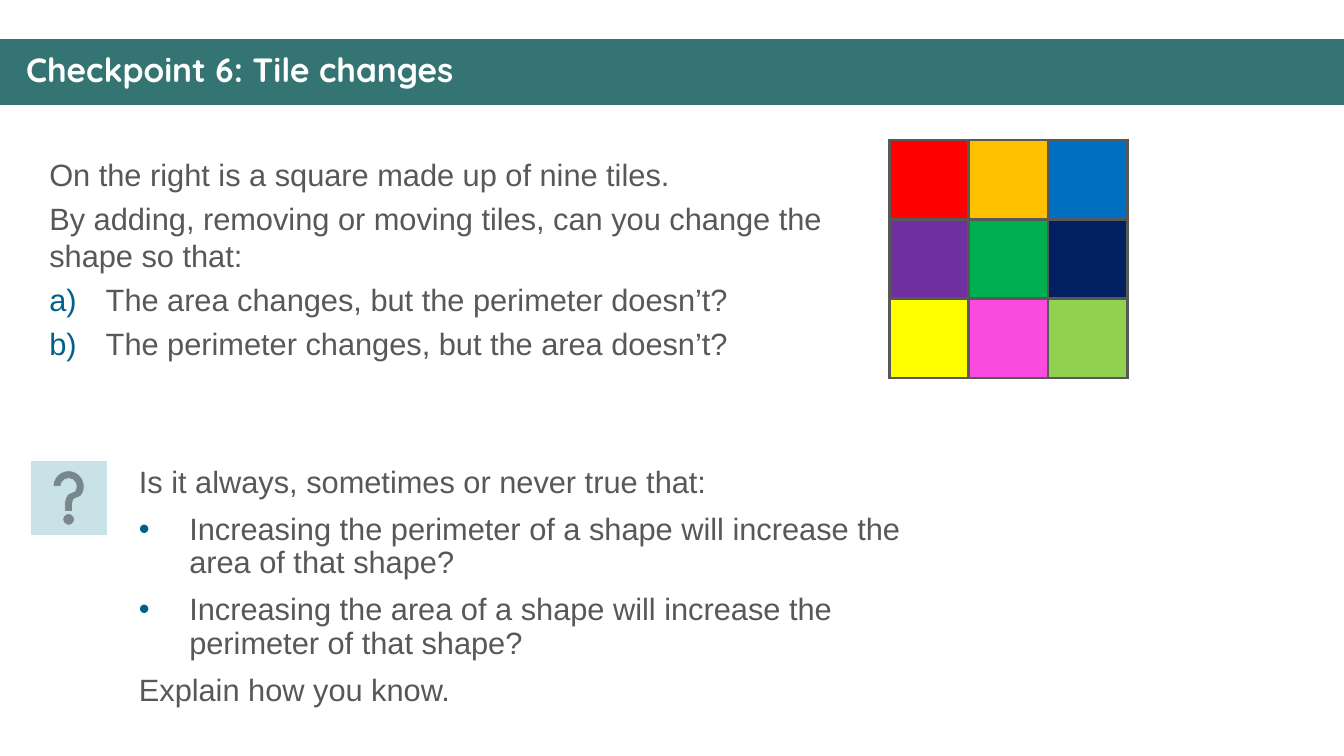
"""Build the Checkpoint 6 slide about tile changes."""
from dataclasses import dataclass
from typing import NamedTuple

from lxml.etree import SubElement
from pptx import Presentation
from pptx.dml.color import RGBColor
from pptx.enum.shapes import MSO_SHAPE
from pptx.oxml.ns import qn
from pptx.util import Inches, Pt

WIDE, HIGH = Inches(13.33), Inches(7.5)


@dataclass(frozen=True)
class Theme:
    bar: str = "347574"
    ink: str = "585858"
    mark: str = "00628C"
    pale: str = "C8E2E8"
    white: str = "FFFFFF"
    font: str = "Arial"
    head: str = "Quicksand"
    body_size: float = 22
    head_size: float = 24
    edge: float = 2.25
    thin: float = 0.5


class Area(NamedTuple):
    """Left, top, width and height as percentages of the slide."""
    left: float
    top: float
    width: float
    height: float

    def place(self) -> tuple[int, ...]:
        sides = (WIDE, HIGH, WIDE, HIGH)
        return tuple(round(side * part / 100) for side, part in zip(sides, self))


class Line(NamedTuple):
    text: str
    mark: str = ""


class Block(NamedTuple):
    area: Area
    lines: list[Line]
    font: str
    size: float
    color: str
    bold: bool = False
    pitch: float = 1.0
    gap: float = 5
    indent: float = 0.5


class Panel(NamedTuple):
    area: Area
    kind: MSO_SHAPE
    color: str


THEME = Theme()
TILES = [
    ["FF0000", "FFC000", "0070C0"],
    ["7030A0", "00B050", "002060"],
    ["FFFF00", "FB4BDE", "92D050"],
]
BOARD = Area(66.17, 18.53, 17.7, 31.47)
PANELS = [
    Panel(Area(0, 5.2, 100, 8.67), MSO_SHAPE.RECTANGLE, THEME.bar),
    Panel(Area(2.33, 61.07, 5.55, 9.6), MSO_SHAPE.ACTION_BUTTON_HELP, THEME.pale),
]
BLOCKS = [
    Block(Area(1.2, 6.4, 97.82, 6.27), [Line("Checkpoint 6: Tile changes")],
          THEME.head, THEME.head_size, THEME.white, bold=True, pitch=0.9),
    Block(Area(2.93, 20, 59.12, 30), [
        Line("On the right is a square made up of nine tiles."),
        Line("By adding, removing or moving tiles, can you change the shape so that:"),
        Line("The area changes, but the perimeter doesn’t?", "buAutoNum"),
        Line("The perimeter changes, but the area doesn’t?", "buAutoNum"),
    ], THEME.font, THEME.body_size, THEME.ink, indent=0.56),
    Block(Area(9.6, 61.07, 63.17, 36), [
        Line("Is it always, sometimes or never true that:"),
        Line("Increasing the perimeter of a shape will increase the area of that shape?", "buChar"),
        Line("Increasing the area of a shape will increase the perimeter of that shape?", "buChar"),
        Line("Explain how you know."),
    ], THEME.font, THEME.body_size, THEME.ink, pitch=0.9, gap=10),
]
MARKS = {"buAutoNum": {"type": "alphaLcParenR"}, "buChar": {"char": "•"}}


def rgb(color: str) -> RGBColor:
    return RGBColor.from_string(color)


def add_mark(para, mark: str, indent: float) -> None:
    props = para._p.get_or_add_pPr()
    props.set("marL", str(Inches(indent)))
    props.set("indent", str(-Inches(indent)))
    tint = SubElement(props, qn("a:buClr"))
    SubElement(tint, qn("a:srgbClr"), val=THEME.mark)
    SubElement(props, qn("a:buFont"), typeface=THEME.font)
    SubElement(props, qn(f"a:{mark}"), **MARKS[mark])


def draw_block(slide, block: Block) -> None:
    frame = slide.shapes.add_textbox(*block.area.place()).text_frame
    frame.word_wrap = True
    frame.text = "\n".join(line.text for line in block.lines)
    for index, (para, line) in enumerate(zip(frame.paragraphs, block.lines)):
        para.line_spacing = block.pitch
        if index:
            para.space_before = Pt(block.gap)
        if line.mark:
            add_mark(para, line.mark, block.indent)
        for run in para.runs:
            run.font.name = block.font
            run.font.size = Pt(block.size)
            run.font.bold = block.bold
            run.font.color.rgb = rgb(block.color)


def draw_panel(slide, panel: Panel) -> None:
    shape = slide.shapes.add_shape(panel.kind, *panel.area.place())
    shape.shadow.inherit = False
    shape.fill.solid()
    shape.fill.fore_color.rgb = rgb(panel.color)
    shape.line.color.rgb = rgb(panel.color)
    shape.line.width = Pt(THEME.thin)


def draw_tile(cell, color: str) -> None:
    props = cell._tc.get_or_add_tcPr()
    for side in ("lnL", "lnR", "lnT", "lnB"):
        edge = SubElement(props, qn(f"a:{side}"), w=str(Pt(THEME.edge)))
        fill = SubElement(edge, qn("a:solidFill"))
        SubElement(fill, qn("a:srgbClr"), val=THEME.ink)
    cell.fill.solid()
    cell.fill.fore_color.rgb = rgb(color)


def draw_board(slide, area: Area, tiles: list[list[str]]) -> None:
    table = slide.shapes.add_table(len(tiles), len(tiles[0]), *area.place()).table
    table.first_row = table.horz_banding = False
    for row, colors in enumerate(tiles):
        for col, color in enumerate(colors):
            draw_tile(table.cell(row, col), color)


def main() -> None:
    deck = Presentation()
    deck.slide_width, deck.slide_height = WIDE, HIGH
    slide = deck.slides.add_slide(deck.slide_layouts[6])
    for panel in PANELS:
        draw_panel(slide, panel)
    for block in BLOCKS:
        draw_block(slide, block)
    draw_board(slide, BOARD, TILES)
    deck.save("out.pptx")


if __name__ == "__main__":
    main()
